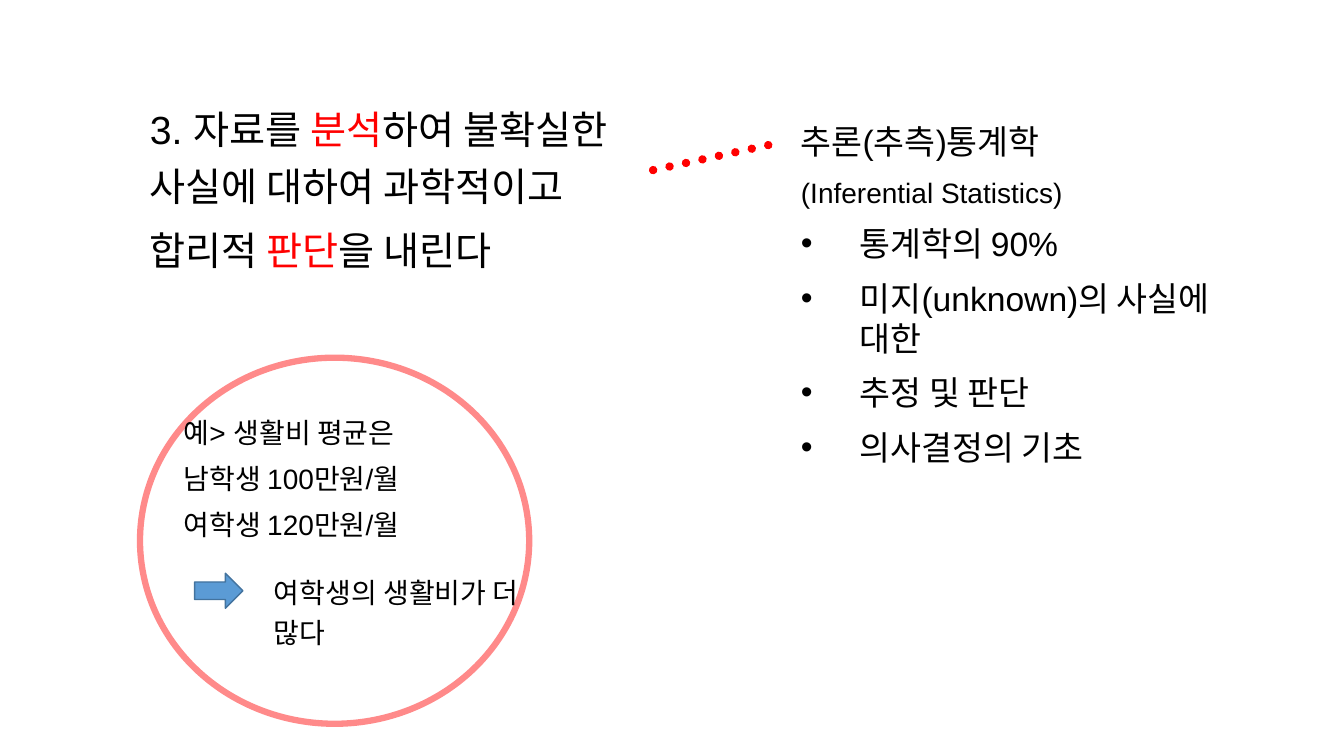
from lxml import etree
from pptx import Presentation
from pptx.dml.color import RGBColor
from pptx.enum.dml import MSO_LINE
from pptx.enum.shapes import MSO_CONNECTOR, MSO_SHAPE
from pptx.oxml.ns import qn
from pptx.util import Pt

OVAL = MSO_SHAPE.OVAL
ARROW = MSO_SHAPE.RIGHT_ARROW
LINE = MSO_CONNECTOR.STRAIGHT
DOT = MSO_LINE.ROUND_DOT
BLACK, RED, BLUE, NAVY = "000000", "FF0000", "5B9BD5", "43739E"
HANG = 42


def color(code):
    return RGBColor.from_string(code)


def add(node, tag, **attrs):
    return etree.SubElement(node, qn(tag), **attrs)


def style(item, form):
    for name, value in form.items():
        setattr(item, name, value)


def stroke(line, code, width):
    line.color.rgb = color(code)
    line.width = Pt(width)


def text(slide, box, paras, size, form):
    """Each paragraph is a list of (words, color) or (words, color, size)."""
    frame = slide.shapes.add_textbox(*map(Pt, box)).text_frame
    frame.word_wrap = True
    for i, runs in enumerate(paras):
        para = frame.paragraphs[0] if i == 0 else frame.add_paragraph()
        style(para, form)
        for words, code, *own in runs:
            run = para.add_run()
            run.text = words
            style(run.font, {"name": "Arial", "size": Pt(own[0] if own else size)})
            run.font.color.rgb = color(code)
    return frame


def loose(size):
    return {"line_spacing": 1.2, "space_before": Pt(size * 0.2)}


def preset(slide, kind, box):
    shape = slide.shapes.add_shape(kind, *map(Pt, box))
    shape.shadow.inherit = False
    return shape


def claim(slide, x, y, w, h):
    text(slide, (x, y, w, h), [
        [("3. 자료를 ", BLACK), ("분석", RED),
         ("하여 불확실한 사실에 대하여 과학적이고", BLACK)],
        [("합리적 ", BLACK), ("판단", RED), ("을 내린다", BLACK)],
    ], 28, loose(28))


def link(slide, x, y, w, h):
    # Dotted line rising to the right
    dots = slide.shapes.add_connector(LINE, Pt(x), Pt(y + h), Pt(x + w), Pt(y))
    stroke(dots.line, RED, 6)
    dots.line.dash_style = DOT
    props = dots._element.spPr
    props.find(qn("a:ln")).set("cap", "rnd")
    add(props, "a:effectLst")


def topic(slide, x, y, w, h):
    heads = [[("추론(추측)통계학", BLACK)],
             [("(Inferential Statistics)", BLACK, 20)]]
    points = ["통계학의 90%", "미지(unknown)의 사실에 대한",
              "추정 및 판단", "의사결정의 기초"]
    frame = text(slide, (x, y, w, h), heads + [[(p, BLACK)] for p in points],
                 24, {"space_before": Pt(10)})
    # Hanging indent, with bullets below the two heading lines
    for i, para in enumerate(frame.paragraphs):
        props = para._p.get_or_add_pPr()
        props.set("marL", str(Pt(HANG)))
        props.set("indent", str(-Pt(HANG)))
        if i < len(heads):
            add(props, "a:buNone")
        else:
            add(props, "a:buFont", typeface="Arial")
            add(props, "a:buChar", char="•")


def example(slide, x, y, w, h):
    # Ring
    ring = preset(slide, OVAL, (x, y, w, h))
    ring.fill.background()
    stroke(ring.line, RED, 4.5)
    tint = ring._element.spPr.find(qn("a:ln")).find(".//" + qn("a:srgbClr"))
    add(tint, "a:alpha", val="45000")
    # Averages
    rows = ["예> 생활비 평균은", "남학생 100만원/월", "여학생 120만원/월"]
    text(slide, (x + 24, y + 33, 250, 104), [[(r, BLACK)] for r in rows],
         20, loose(20))
    # Arrow and result
    arrow = preset(slide, ARROW, (x + 39, y + 154, 34.5, 25))
    arrow.fill.solid()
    arrow.fill.fore_color.rgb = color(BLUE)
    stroke(arrow.line, NAVY, 1)
    text(slide, (x + 88.5, y + 147, 199.5, 65.5),
         [[("여학생의 생활비가 더 많다", BLACK)]], 20, loose(20))


def main():
    deck = Presentation()
    style(deck, {"slide_width": Pt(960), "slide_height": Pt(540)})
    slide = deck.slides.add_slide(deck.slide_layouts[6])
    claim(slide, 100, 65, 377, 149)
    link(slide, 466.5, 103.5, 83, 18)
    topic(slide, 565, 83, 333.5, 303)
    example(slide, 100, 255.5, 278, 261.5)
    deck.save("out.pptx")


if __name__ == "__main__":
    main()
